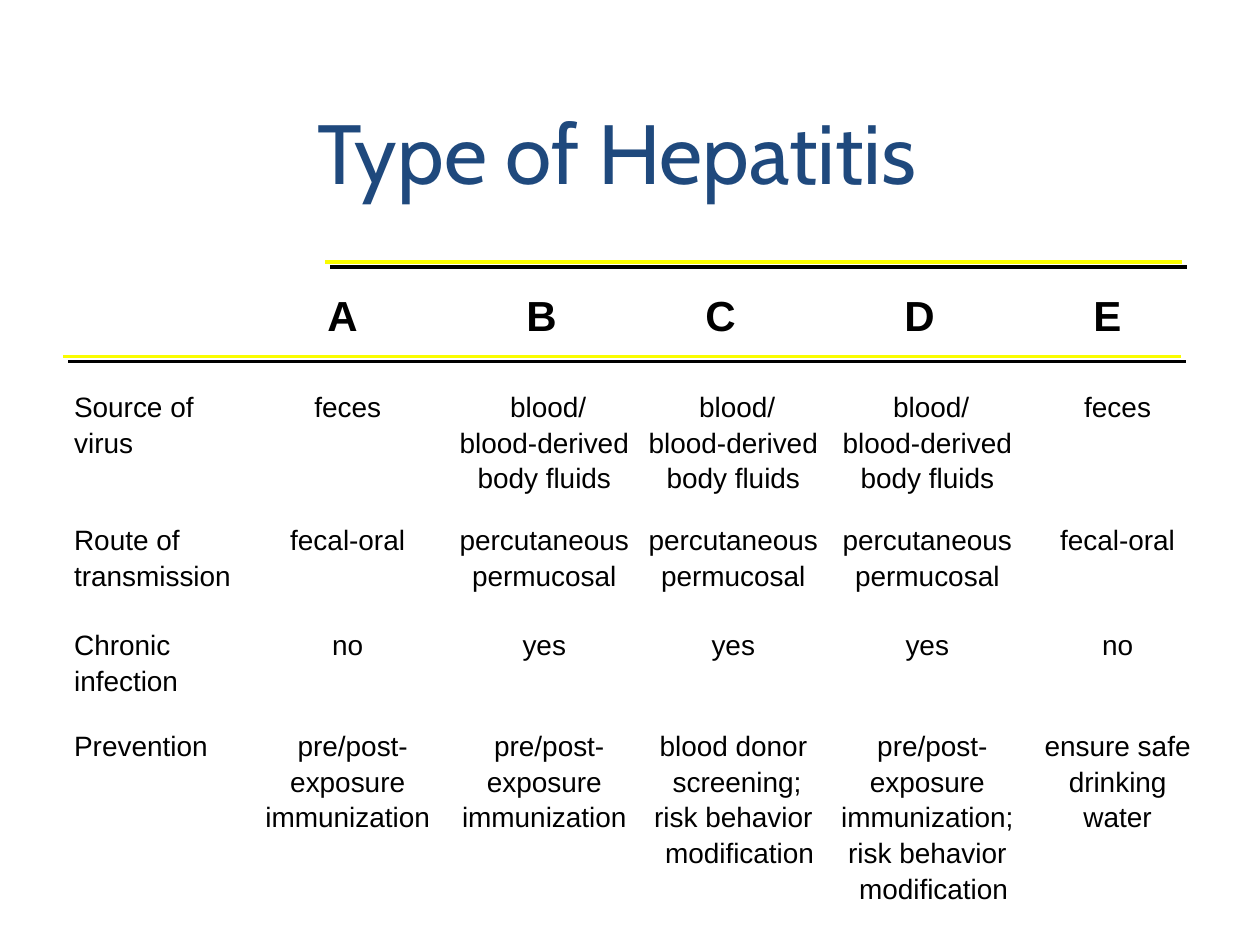
"""Build a slide that compares the types of hepatitis."""
from lxml import etree
from pptx import Presentation
from pptx.dml.color import RGBColor
from pptx.enum.shapes import MSO_CONNECTOR
from pptx.enum.text import MSO_AUTO_SIZE, PP_ALIGN
from pptx.oxml.ns import qn
from pptx.util import Inches, Pt

STRAIGHT = MSO_CONNECTOR.STRAIGHT
FIT_SHAPE = MSO_AUTO_SIZE.SHAPE_TO_FIT_TEXT
LEFT, CENTER = PP_ALIGN.LEFT, PP_ALIGN.CENTER

BLACK = RGBColor(0x00, 0x00, 0x00)
NAVY = RGBColor(0x1F, 0x49, 0x7D)
YELLOW = RGBColor(0xFA, 0xFD, 0x00)

LABEL_LEFT = 0.49
LINE_PITCH = 0.285
SLACK = 0.02
COLUMN_CENTERS = [2.76, 4.32, 5.82, 7.36, 8.87]
HEADERS = [("A", 2.5, 0.3), ("B", 4.08, 0.52), ("C", 5.5, 0.44),
           ("D", 7.08, 0.52), ("E", 8.58, 0.44)]
RULES = [(0.5, 9.37, 2.83), (2.58, 9.38, 2.08)]

FLUIDS = ["blood/", "blood-derived", "body fluids"]
CONTACT = ["percutaneous", "permucosal"]
IMMUNIZATION = ["pre/post-", "exposure", "immunization"]
BEHAVIOR = ["risk behavior", "modification"]
ROWS = [
    (3.04, ["Source of", "virus"],
     [["feces"], FLUIDS, FLUIDS, FLUIDS, ["feces"]]),
    (4.1, ["Route of", "transmission"],
     [["fecal-oral"], CONTACT, CONTACT, CONTACT, ["fecal-oral"]]),
    (4.93, ["Chronic", "infection"],
     [["no"], ["yes"], ["yes"], ["yes"], ["no"]]),
    (5.73, ["Prevention"],
     [IMMUNIZATION, IMMUNIZATION,
      ["blood donor", "screening;"] + BEHAVIOR,
      ["pre/post-", "exposure", "immunization;"] + BEHAVIOR,
      ["ensure safe", "drinking", "water"]]),
]
WIDTHS = {
    "Source of": 1.15, "virus": 0.67, "Route of": 1.04, "transmission": 1.44,
    "Chronic": 0.96, "infection": 1.02, "Prevention": 1.26,
    "feces": 0.73, "blood/": 0.8, "blood-derived": 1.54, "body fluids": 1.26,
    "fecal-oral": 1.11, "percutaneous": 1.54, "permucosal": 1.35,
    "no": 0.44, "yes": 0.54, "pre/post-": 1.08, "exposure": 1.11,
    "immunization": 1.51, "immunization;": 1.57, "blood donor": 1.37,
    "screening;": 1.22, "risk behavior": 1.46, "modification": 1.38,
    "ensure safe": 1.36, "drinking": 0.97, "water": 0.74,
}
NUDGES = {"blood/": 0.03, "pre/post-": 0.04, "screening;": 0.03,
          "modification": 0.05}


def add_text(s, text, left, top, width, height, *, size=16, font="Arial",
             color=BLACK, bold=False, align=LEFT, wrap=False):
    """Add a one-line text box."""
    sp = s.shapes.add_textbox(Inches(left), Inches(top),
                              Inches(width), Inches(height))
    tf = sp.text_frame
    tf.word_wrap = wrap
    tf.auto_size = FIT_SHAPE
    p = tf.paragraphs[0]
    p.alignment = align
    r = p.add_run()
    r.text = text
    r.font.size = Pt(size)
    r.font.name = font
    r.font.bold = bold
    r.font.color.rgb = color


def add_rule(s, left, right, y):
    """Add a yellow horizontal line with a hard black shadow."""
    line = s.shapes.add_connector(STRAIGHT, Inches(left), Inches(y),
                                  Inches(right), Inches(y))
    line.line.color.rgb = YELLOW
    line.line.width = Pt(2)
    effects = etree.SubElement(line._element.spPr, qn("a:effectLst"))
    shadow = etree.SubElement(effects, qn("a:outerShdw"), blurRad="0",
                              dist=str(Pt(4.2)), dir="2700000",
                              algn="ctr", rotWithShape="0")
    etree.SubElement(shadow, qn("a:srgbClr"), val=str(BLACK))


def add_cell(s, lines, top, center=None):
    """Stack lines around a column centre, or at the label edge without one."""
    for i, text in enumerate(lines):
        width = WIDTHS[text] + SLACK
        left, align = LABEL_LEFT, LEFT
        if center is not None:
            left = center + NUDGES.get(text, 0) - width / 2
            align = CENTER
        add_text(s, text, left, top + i * LINE_PITCH, width, 0.36, align=align)


def main():
    """Build and save the slide."""
    prs = Presentation()
    prs.slide_width, prs.slide_height = Inches(10), Inches(7.5)
    s = prs.slides.add_slide(prs.slide_layouts[6])
    for rule in RULES:
        add_rule(s, *rule)
    add_text(s, "Type of Hepatitis", 2.42, 0.75, 5.53, 0.9,
             size=48, font="Cabin", color=NAVY, wrap=True)
    for letter, left, width in HEADERS:
        add_text(s, letter, left, 2.25, width, 0.5,
                 size=24, bold=True, wrap=True)
    for top, label, cells in ROWS:
        add_cell(s, label, top)
        for center, lines in zip(COLUMN_CENTERS, cells):
            add_cell(s, lines, top, center)
    prs.save("out.pptx")


if __name__ == "__main__":
    main()
